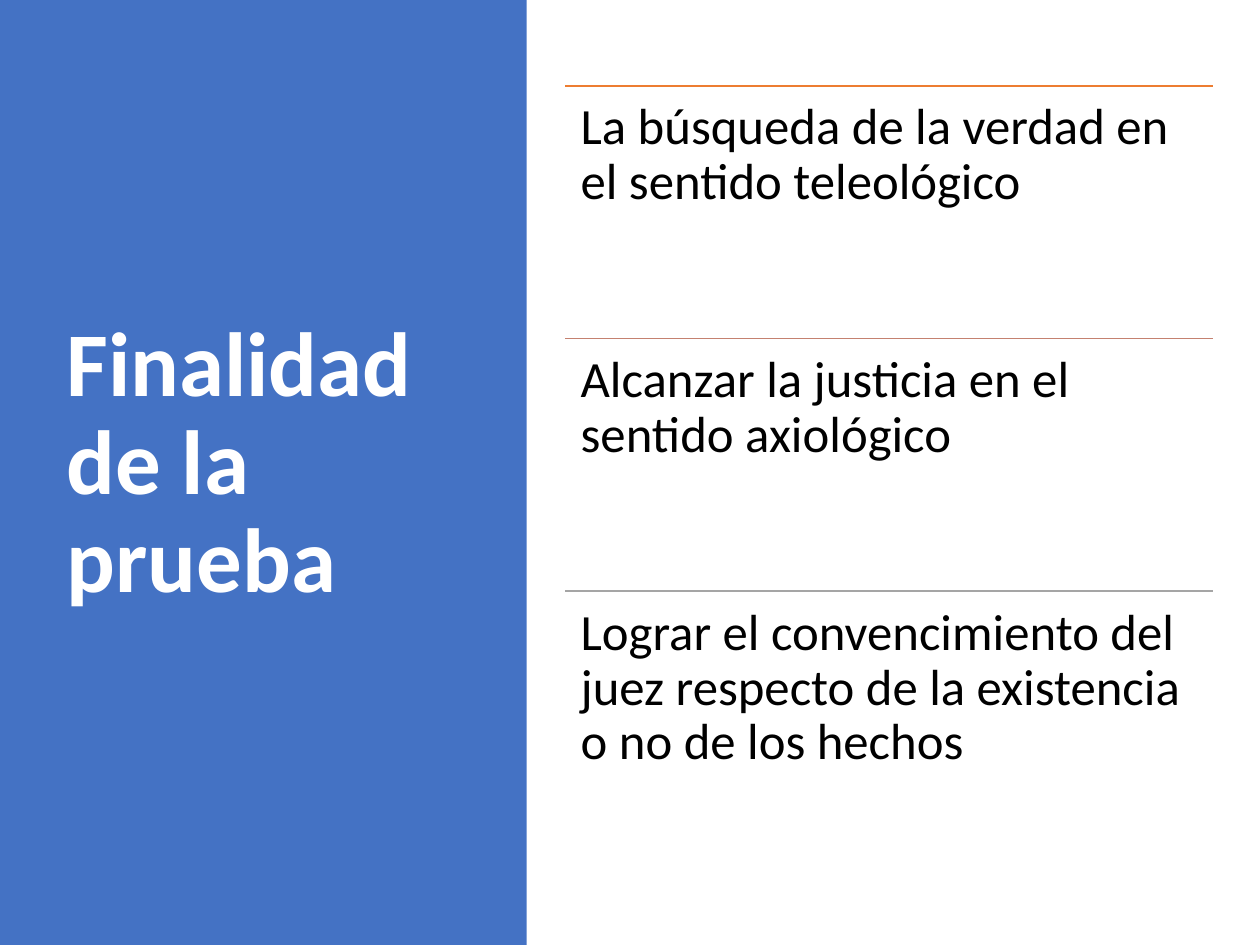
from lxml import etree
from pptx import Presentation
from pptx.dml.color import RGBColor
from pptx.enum.shapes import MSO_CONNECTOR, MSO_SHAPE
from pptx.enum.text import MSO_ANCHOR
from pptx.oxml.ns import qn
from pptx.util import Pt

RECTANGLE = MSO_SHAPE.RECTANGLE
STRAIGHT = MSO_CONNECTOR.STRAIGHT
TOP = MSO_ANCHOR.TOP
MIDDLE = MSO_ANCHOR.MIDDLE

PAGE_WIDTH, PAGE_HEIGHT = 720, 540
COLORS = {
    "panel": "4472C4",
    "title": "FFFFFF",
    "body": "000000",
    "orange": "ED7D31",
    "rose": "C48170",
    "gray": "A5A5A5",
}
PURPOSES = [
    ("La búsqueda de la verdad en el sentido teleológico", "orange"),
    ("Alcanzar la justicia en el sentido axiológico", "rose"),
    ("Lograr el convencimiento del juez respecto de la existencia o no de los hechos", "gray"),
]
LIST_LEFT, LIST_TOP, LIST_WIDTH, ROW_HEIGHT = 323.1, 49.1, 369.9, 144.4


class SlideBuilder:
    font = "Calibri"
    line_spacing = 0.9

    def __init__(self, slide):
        self.shapes = slide.shapes

    def color(self, name):
        return RGBColor.from_string(COLORS[name])

    def panel(self, left, top, width, height, color):
        panel = self.shapes.add_shape(RECTANGLE, Pt(left), Pt(top), Pt(width), Pt(height))
        panel.shadow.inherit = False
        panel.fill.solid()
        panel.fill.fore_color.rgb = self.color(color)
        panel.line.fill.background()

    def rule(self, left, top, width, color):
        rule = self.shapes.add_connector(STRAIGHT, Pt(left), Pt(top), Pt(left + width), Pt(top))
        rule.line.color.rgb = self.color(color)
        rule.line.width = Pt(1)
        etree.SubElement(rule._element.spPr, qn("a:effectLst"))

    def text(self, left, top, width, height, text, size, color,
             bold=False, anchor=TOP, margins=(7.2, 3.6)):
        box = self.shapes.add_textbox(Pt(left), Pt(top), Pt(width), Pt(height))
        frame = box.text_frame
        frame.word_wrap = True
        frame.vertical_anchor = anchor
        frame.margin_left = frame.margin_right = Pt(margins[0])
        frame.margin_top = frame.margin_bottom = Pt(margins[1])
        frame.text = text
        para = frame.paragraphs[0]
        para.line_spacing = self.line_spacing
        span = para.runs[0]
        span.font.name = self.font
        span.font.size = Pt(size)
        span.font.bold = bold
        span.font.color.rgb = self.color(color)


def main():
    deck = Presentation()
    deck.slide_width, deck.slide_height = Pt(PAGE_WIDTH), Pt(PAGE_HEIGHT)
    page = SlideBuilder(deck.slides.add_slide(deck.slide_layouts[6]))

    page.panel(0, 0, 301, PAGE_HEIGHT, "panel")
    page.text(31, 49, 224.6, 433.4, "Finalidad de la prueba", 52, "title",
              bold=True, anchor=MIDDLE)

    for index, (purpose, color) in enumerate(PURPOSES):
        top = LIST_TOP + index * ROW_HEIGHT
        page.rule(LIST_LEFT, top, LIST_WIDTH, color)
        page.text(LIST_LEFT, top, LIST_WIDTH, ROW_HEIGHT, purpose, 29, "body",
                  margins=(8.7, 8.7))

    deck.save("out.pptx")


if __name__ == "__main__":
    main()
